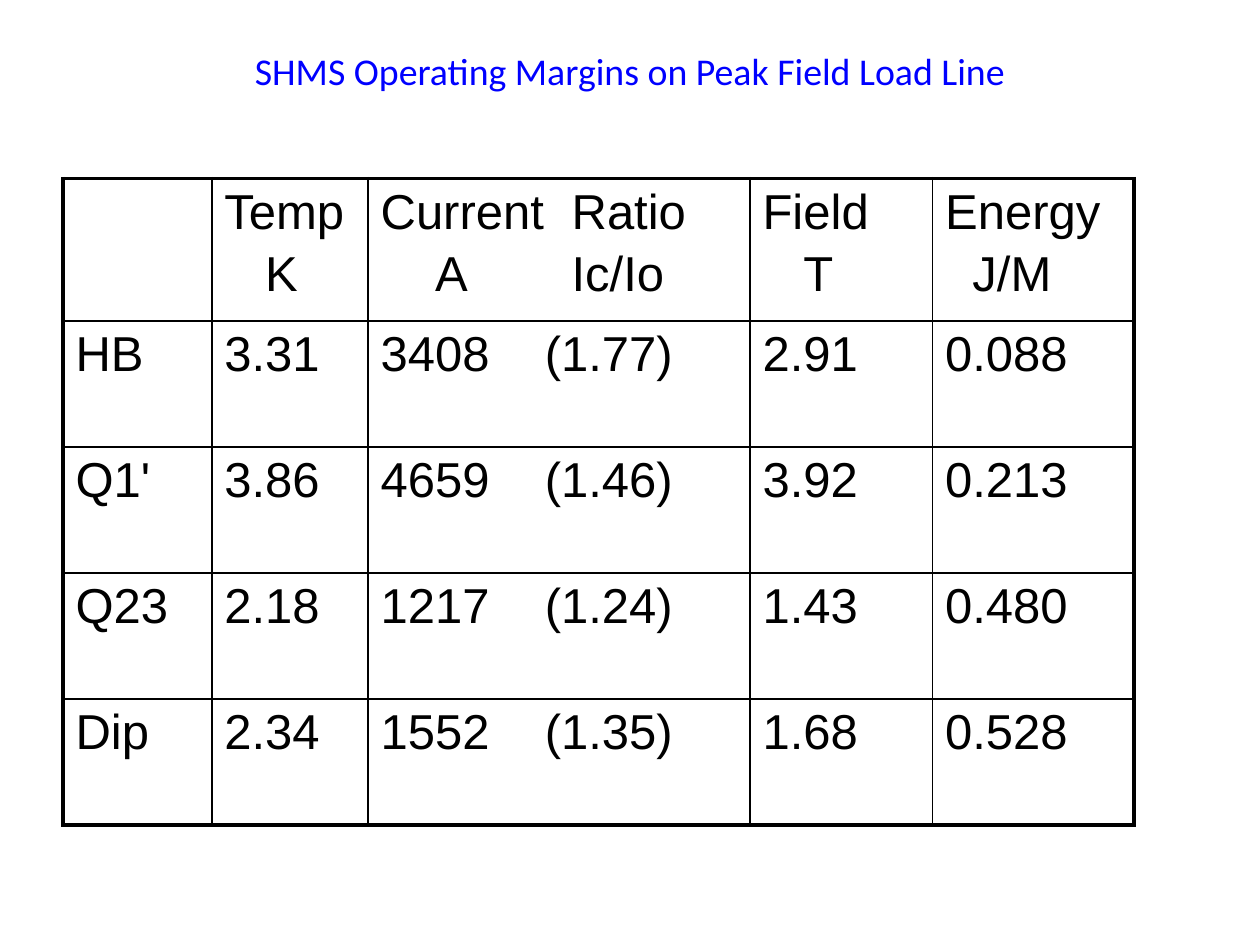
from lxml.etree import SubElement
from pptx import Presentation
from pptx.dml.color import RGBColor
from pptx.enum.text import MSO_ANCHOR, PP_ALIGN
from pptx.oxml.ns import qn
from pptx.util import Cm, Pt

BLACK = RGBColor(0, 0, 0)
BLUE = RGBColor(0, 0, 255)

HEADINGS = ["", "Temp\n\tK", "Current\tRatio\n\tA\tIc/Io", "Field\n\tT", "Energy\n\tJ/M"]
MAGNETS = [
    ["HB", "3.31", "3408\t(1.77)", "2.91", "0.088"],
    ["Q1'", "3.86", "4659\t(1.46)", "3.92", "0.213"],
    ["Q23", "2.18", "1217\t(1.24)", "1.43", "0.480"],
    ["Dip", "2.34", "1552\t(1.35)", "1.68", "0.528"],
]
COLUMN_WIDTHS = [3, 3.15, 7.7, 3.68, 4.06]
ROW_HEIGHTS = [2.87] + [2.54] * len(MAGNETS)
UNIT_TABS = [[], [0.82], [1.1, 3.85], [0.82], [0.55]]
HEADING_TABS = [[], [], [3.85], [], []]
RATIO_TABS = [[], [], [3.31], [], []]


def write_text(frame, text, *, font, size, color, align=PP_ALIGN.LEFT, gap=0, tabs=()):
    for index, line in enumerate(text.split("\n")):
        paragraph = frame.add_paragraph() if index else frame.paragraphs[0]
        paragraph.alignment = align
        paragraph.space_before = Pt(gap if index else 0)
        stops = tabs[index] if index < len(tabs) else []
        if stops:
            tab_list = SubElement(paragraph._p.get_or_add_pPr(), qn("a:tabLst"))
            for stop in stops:
                SubElement(tab_list, qn("a:tab"), pos=str(Cm(stop)), algn="l")
        run = paragraph.add_run()
        run.text = line
        run.font.name = font
        run.font.size = Pt(size)
        run.font.color.rgb = color


class MarginSlide:
    title_style = dict(font="Calibri", size=21.6, color=BLUE, align=PP_ALIGN.CENTER)
    cell_style = dict(font="Arial", size=28, color=BLACK, gap=4.5)
    outer_line = 2.25
    inner_line = 1

    def __init__(self, slide):
        self.slide = slide

    def title(self, text, left, top, width, height):
        heading = self.slide.shapes.add_textbox(Cm(left), Cm(top), Cm(width), Cm(height))
        frame = heading.text_frame
        frame.word_wrap = True
        frame.vertical_anchor = MSO_ANCHOR.MIDDLE
        write_text(frame, text, **self.title_style)

    def border(self, cell, outer_sides):
        properties = cell._tc.get_or_add_tcPr()
        for side in "LRTB":
            width = self.outer_line if side in outer_sides else self.inner_line
            line = SubElement(properties, qn(f"a:ln{side}"), w=str(Pt(width)))
            fill = SubElement(line, qn("a:solidFill"))
            SubElement(fill, qn("a:srgbClr"), val=str(BLACK))

    def table(self, rows, left, top, widths, heights):
        margins = self.slide.shapes.add_table(
            len(rows), len(widths), Cm(left), Cm(top), Cm(sum(widths)), Cm(sum(heights))
        ).table
        margins.first_row = False
        margins.horz_banding = False
        for column, width in zip(margins.columns, widths):
            column.width = Cm(width)
        for row, height in zip(margins.rows, heights):
            row.height = Cm(height)
        last_row, last_column = len(rows) - 1, len(widths) - 1
        for r, values in enumerate(rows):
            for c, value in enumerate(values):
                cell = margins.cell(r, c)
                edges = {"L": c == 0, "R": c == last_column, "T": r == 0, "B": r == last_row}
                self.border(cell, [side for side, outer in edges.items() if outer])
                cell.fill.background()
                if value:
                    tabs = [RATIO_TABS[c]] if r else [HEADING_TABS[c], UNIT_TABS[c]]
                    write_text(cell.text_frame, value, tabs=tabs, **self.cell_style)


def main():
    presentation = Presentation()
    presentation.slide_width = Cm(25.4)
    presentation.slide_height = Cm(19.05)
    page = MarginSlide(presentation.slides.add_slide(presentation.slide_layouts[6]))
    page.title("SHMS Operating Margins on Peak Field Load Line", 1.27, 0.85, 22.86, 1.14)
    page.table([HEADINGS] + MAGNETS, 1.27, 3.6, COLUMN_WIDTHS, ROW_HEIGHTS)
    presentation.save("out.pptx")


if __name__ == "__main__":
    main()
